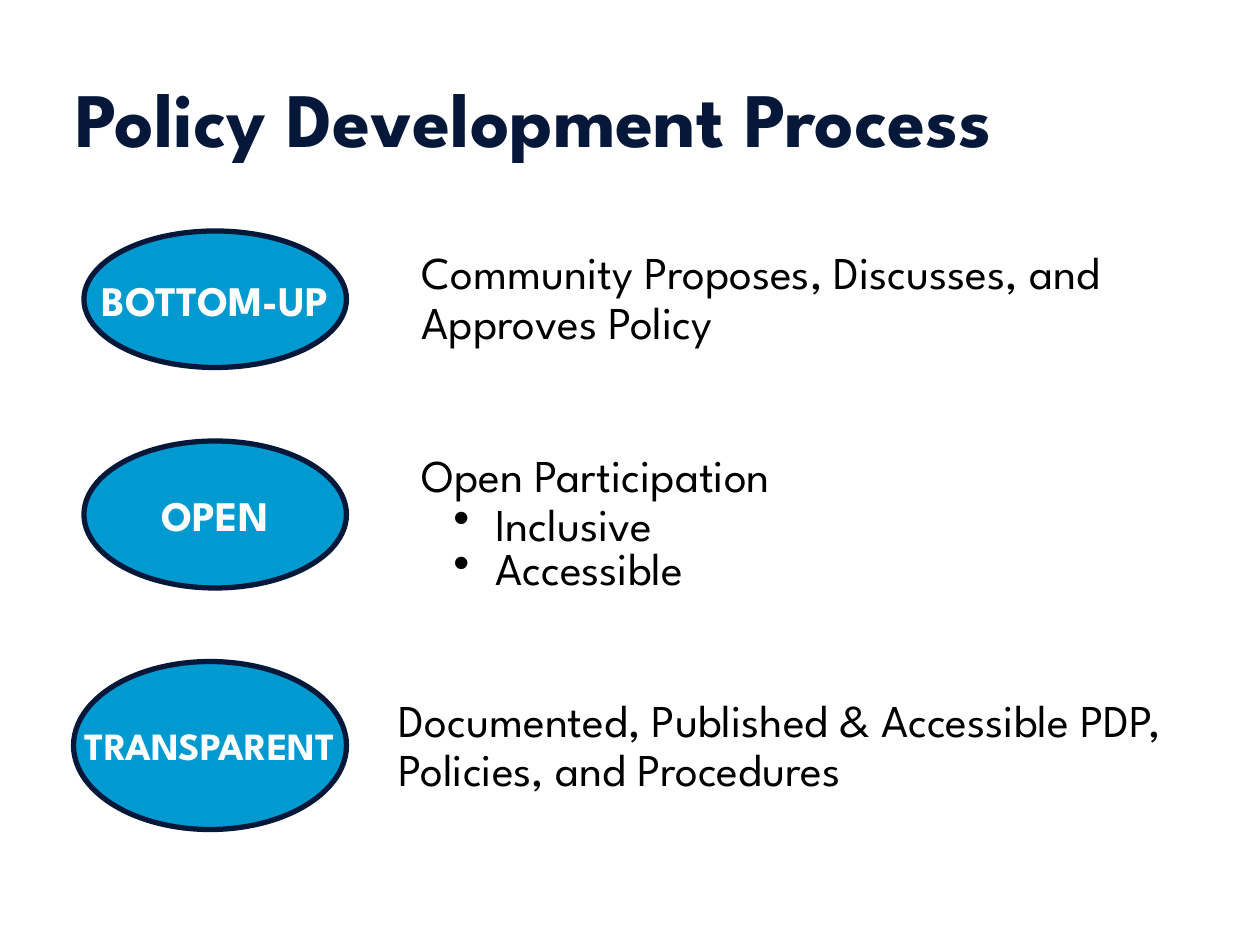
from lxml import etree
from pptx import Presentation
from pptx.dml.color import RGBColor
from pptx.enum import shapes, text
from pptx.oxml import ns
from pptx.util import Pt

FONT = "League Spartan"
COLORS = {"navy": "05183A", "blue": "0099D0", "white": "FFFFFF", "black": "000000"}
PRINCIPLES = [
    {"label": "BOTTOM-UP", "size": 24, "oval": (48, 132, 150, 78),
     "box": (234, 139.68, 432, 63.36), "spacing": 0.9,
     "statement": "Community Proposes, Discusses, and Approves Policy"},
    {"label": "OPEN", "size": 24, "oval": (48, 252, 150, 84),
     "box": (234, 257.76, 411, 88.56), "spacing": 0.8,
     "statement": "Open Participation", "bullets": ["Inclusive", "Accessible"]},
    {"label": "TRANSPARENT", "size": 22, "oval": (42, 378, 156, 96),
     "box": (228, 398.88, 498, 56.16), "spacing": 0.9, "inset": 0,
     "statement": "Documented, Published & Accessible PDP, Policies, and Procedures"},
]


def color(name):
    """Return the named colour."""
    return RGBColor.from_string(COLORS[name])


def add_run(paragraph, words, size, color_name, bold=False):
    """Add one formatted run to a paragraph."""
    run = paragraph.add_run()
    run.text = words
    run.font.name, run.font.size, run.font.bold = FONT, Pt(size), bold
    run.font.color.rgb = color(color_name)


def add_text_box(slide, box, inset=None):
    """Add a wrapping text box and return its text frame."""
    frame = slide.shapes.add_textbox(*map(Pt, box)).text_frame
    frame.word_wrap = True
    if inset is not None:
        frame.margin_left = frame.margin_right = Pt(inset)
        frame.margin_top = frame.margin_bottom = Pt(inset)
    return frame


def add_title(slide, box, words):
    """Add the slide title, centred vertically in its box."""
    frame = add_text_box(slide, box)
    frame.vertical_anchor = text.MSO_ANCHOR.MIDDLE
    add_run(frame.paragraphs[0], words, 44, "navy", bold=True)


def add_oval(slide, box, label, size):
    """Add an outlined oval with a centred label."""
    oval = slide.shapes.add_shape(shapes.MSO_SHAPE.OVAL, *map(Pt, box))
    oval.shadow.inherit = False
    oval.fill.solid()
    oval.fill.fore_color.rgb = color("blue")
    oval.line.color.rgb = color("navy")
    oval.line.width = Pt(3)
    frame = oval.text_frame
    frame.word_wrap = False
    frame.vertical_anchor = text.MSO_ANCHOR.MIDDLE
    paragraph = frame.paragraphs[0]
    paragraph.alignment = text.PP_ALIGN.CENTER
    add_run(paragraph, label, size, "white", bold=True)


def add_bullet(frame, words):
    """Add an indented bullet paragraph to a text frame."""
    paragraph = frame.add_paragraph()
    paragraph.level = 1
    paragraph.line_spacing = 0.4
    paragraph.space_before = Pt(13)
    properties = paragraph._p.get_or_add_pPr()
    properties.set("marL", str(Pt(42)))
    properties.set("indent", str(Pt(-24)))
    etree.SubElement(properties, ns.qn("a:buFont")).set("typeface", "Arial")
    etree.SubElement(properties, ns.qn("a:buChar")).set("char", "•")
    add_run(paragraph, words, 26, "black")


def add_principle(slide, principle):
    """Add one principle: its oval and its statement with any bullets."""
    add_oval(slide, principle["oval"], principle["label"], principle["size"])
    frame = add_text_box(slide, principle["box"], principle.get("inset"))
    paragraph = frame.paragraphs[0]
    paragraph.line_spacing = principle["spacing"]
    add_run(paragraph, principle["statement"], 26, "black")
    for words in principle.get("bullets", []):
        add_bullet(frame, words)


def main():
    """Build and save the presentation."""
    presentation = Presentation()
    presentation.slide_width, presentation.slide_height = Pt(720), Pt(540)
    slide = presentation.slides.add_slide(presentation.slide_layouts[6])
    add_title(slide, (36, 21.6, 648, 90), "Policy Development Process")
    for principle in PRINCIPLES:
        add_principle(slide, principle)
    presentation.save("out.pptx")


if __name__ == "__main__":
    main()
